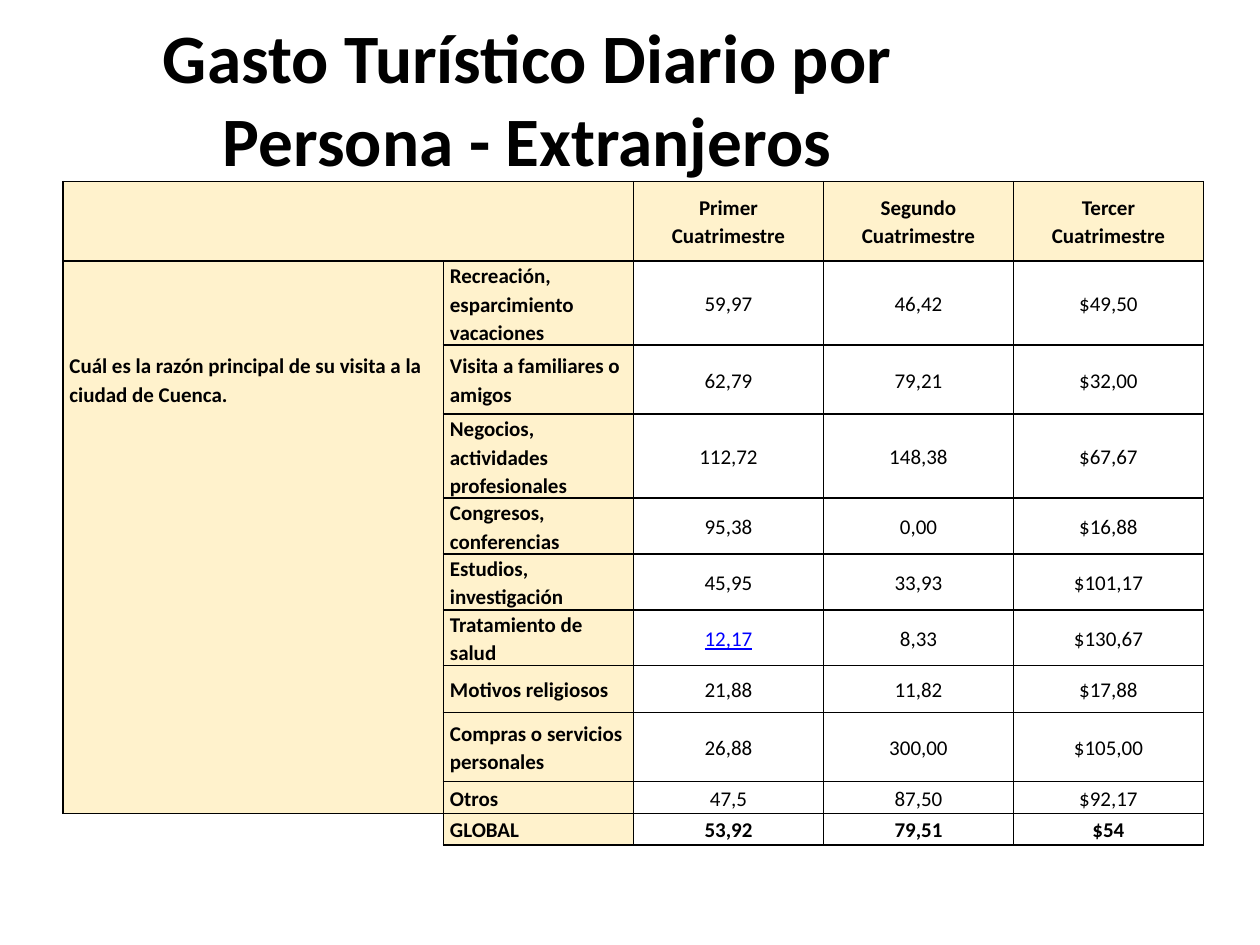
from dataclasses import dataclass

from lxml.etree import SubElement
from pptx import Presentation
from pptx.dml.color import RGBColor
from pptx.enum.text import MSO_ANCHOR, PP_ALIGN
from pptx.oxml.ns import qn
from pptx.util import Cm, Pt


@dataclass(frozen=True)
class Theme:
    """Colours, font and type sizes of the slide."""
    font: str = "Calibri"
    ink: str = "000000"
    link: str = "0000FF"
    label_fill: str = "FFF2CC"
    title_size: float = 39.6
    table_size: float = 12
    border: float = 1


THEME = Theme()
TITLE = "Gasto Turístico Diario por Persona - Extranjeros"
QUESTION = "Cuál es la razón principal de su visita a la ciudad de Cuenca."
HEADER = ["Primer\nCuatrimestre", "Segundo Cuatrimestre", "Tercer\nCuatrimestre"]
SPENDING = [
    ("Recreación, esparcimiento vacaciones", "59,97", "46,42", "$49,50"),
    ("Visita a familiares o amigos", "62,79", "79,21", "$32,00"),
    ("Negocios, actividades profesionales", "112,72", "148,38", "$67,67"),
    ("Congresos, conferencias", "95,38", "0,00", "$16,88"),
    ("Estudios, investigación", "45,95", "33,93", "$101,17"),
    ("Tratamiento de salud", "12,17", "8,33", "$130,67"),
    ("Motivos religiosos", "21,88", "11,82", "$17,88"),
    ("Compras o servicios personales", "26,88", "300,00", "$105,00"),
    ("Otros", "47,5", "87,50", "$92,17"),
    ("GLOBAL", "53,92", "79,51", "$54"),
]
COL_WIDTHS = [7.67] + [3.83] * 4
ROW_HEIGHTS = [1.6] + [1.4] * 3 + [0.94] * 4 + [1.4] + [0.64] * 2
LINKED_CELL = (6, 2)


def set_attrs(obj, values):
    """Set each named attribute of an object."""
    for name, value in values.items():
        setattr(obj, name, value)


def write_text(tf, text, size, bold, align, spacing=1.0, color=THEME.ink, underline=False):
    """Write one paragraph for each line of text in a single style."""
    tf.text = text
    for p in tf.paragraphs:
        set_attrs(p, {"alignment": align, "line_spacing": spacing})
        for r in p.runs:
            set_attrs(r.font, {"name": THEME.font, "size": Pt(size),
                               "bold": bold, "underline": underline})
            r.font.color.rgb = RGBColor.from_string(color)
        if not p.runs:
            SubElement(p._p, qn("a:endParaRPr"), sz=str(size * 100))


def set_borders(cell, sides):
    """Draw the given sides (L, R, T, B) of a cell and clear the others."""
    tc_pr = cell._tc.get_or_add_tcPr()
    for side in "LRTB":
        ln = SubElement(tc_pr, qn(f"a:ln{side}"), w=str(Pt(THEME.border)))
        if side in sides:
            fill = SubElement(ln, qn("a:solidFill"))
            SubElement(fill, qn("a:srgbClr"), val=THEME.ink)
        else:
            SubElement(ln, qn("a:noFill"))


def question_borders(row, last):
    """Return the visible sides of a first-column cell."""
    if row == 0:
        return "LRTB"
    if row == last:
        return "RT"
    return "LR" + ("T" if row == 1 else "") + ("B" if row == last - 1 else "")


def format_cell(cell, text, row, col, last):
    """Fill, outline and write one table cell."""
    is_label = row == 0 or col == 1 or (col == 0 and row < last)
    set_attrs(cell, {"margin_left": Cm(0.13), "margin_right": Cm(0.13),
                     "margin_top": 0, "margin_bottom": 0,
                     "vertical_anchor": MSO_ANCHOR.MIDDLE})
    set_borders(cell, question_borders(row, last) if col == 0 else "LRTB")
    if is_label:
        cell.fill.solid()
        cell.fill.fore_color.rgb = RGBColor.from_string(THEME.label_fill)
    else:
        cell.fill.background()
    linked = (row, col) == LINKED_CELL
    write_text(cell.text_frame, text, THEME.table_size, is_label or row == last,
               PP_ALIGN.CENTER if col > 1 else PP_ALIGN.LEFT, 1.11,
               THEME.link if linked else THEME.ink, linked)


def add_title(s, left, top, width, height):
    """Place the centred title in its box."""
    sp = s.shapes.add_textbox(Cm(left), Cm(top), Cm(width), Cm(height))
    tf = sp.text_frame
    set_attrs(tf, {"word_wrap": True, "vertical_anchor": MSO_ANCHOR.MIDDLE})
    write_text(tf, TITLE, THEME.title_size, True, PP_ALIGN.CENTER)


def add_spending_table(s, left, top):
    """Place the table of daily spending by reason for the visit."""
    rows = [["", "", *HEADER]] + [["", *row] for row in SPENDING]
    rows[1][0] = QUESTION
    last = len(rows) - 1
    table = s.shapes.add_table(len(rows), len(COL_WIDTHS), Cm(left), Cm(top),
                               Cm(sum(COL_WIDTHS)), Cm(sum(ROW_HEIGHTS))).table
    set_attrs(table, {"first_row": False, "horz_banding": False})
    for column, width in zip(table.columns, COL_WIDTHS):
        column.width = Cm(width)
    for i, height in enumerate(ROW_HEIGHTS):
        table.rows[i].height = Cm(height)
        for j, text in enumerate(rows[i]):
            format_cell(table.cell(i, j), text, i, j, last)
    for start, end in [((0, 0), (0, 1)), ((1, 0), (3, 0)), ((4, 0), (9, 0))]:
        table.cell(*start).merge(table.cell(*end))


def main():
    """Build and save the slide."""
    prs = Presentation()
    set_attrs(prs, {"slide_width": Cm(25.4), "slide_height": Cm(19.05)})
    s = prs.slides.add_slide(prs.slide_layouts[6])
    add_title(s, 1.27, 0.38, 18.72, 3.18)
    add_spending_table(s, 1.27, 3.66)
    prs.save("out.pptx")


if __name__ == "__main__":
    main()
